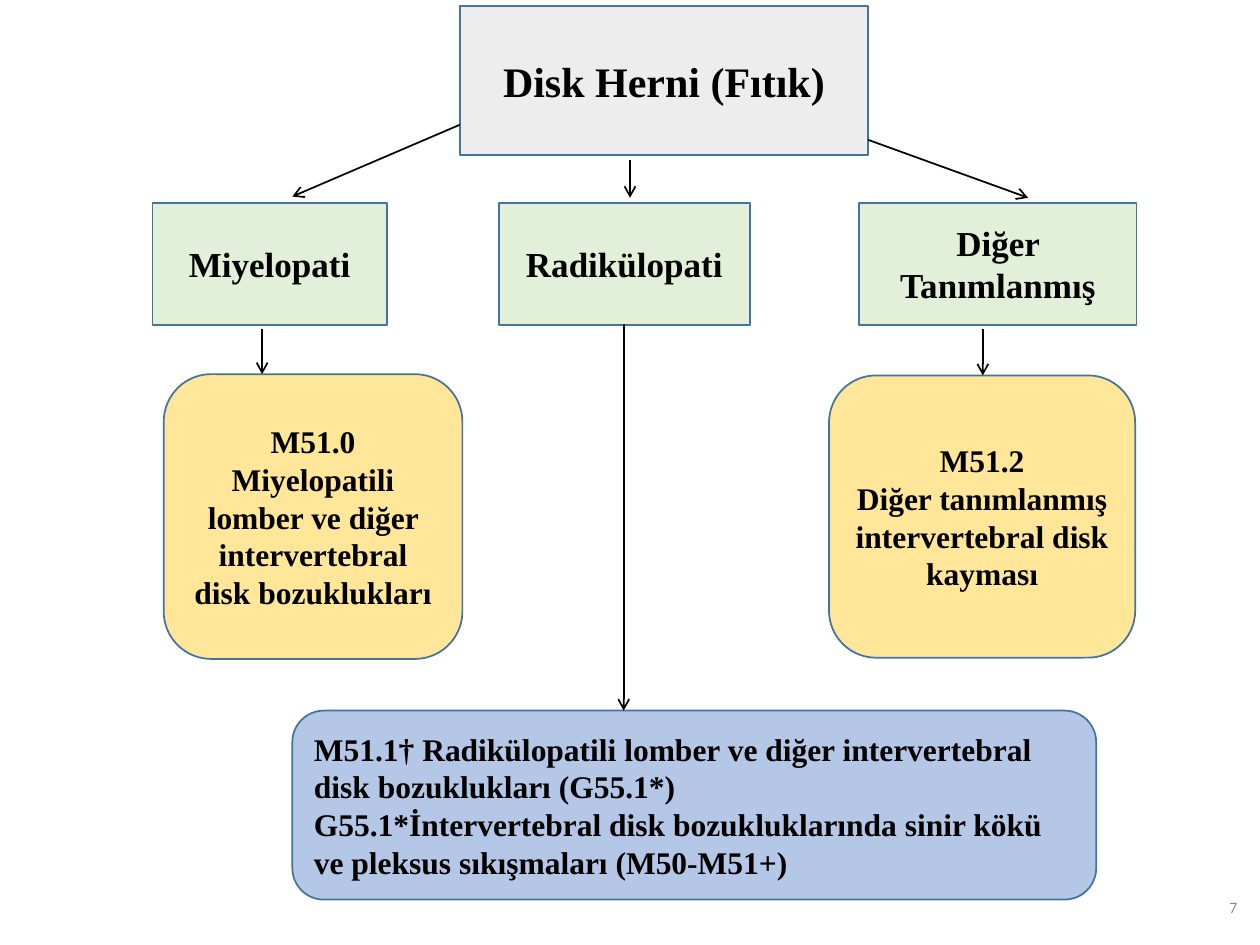
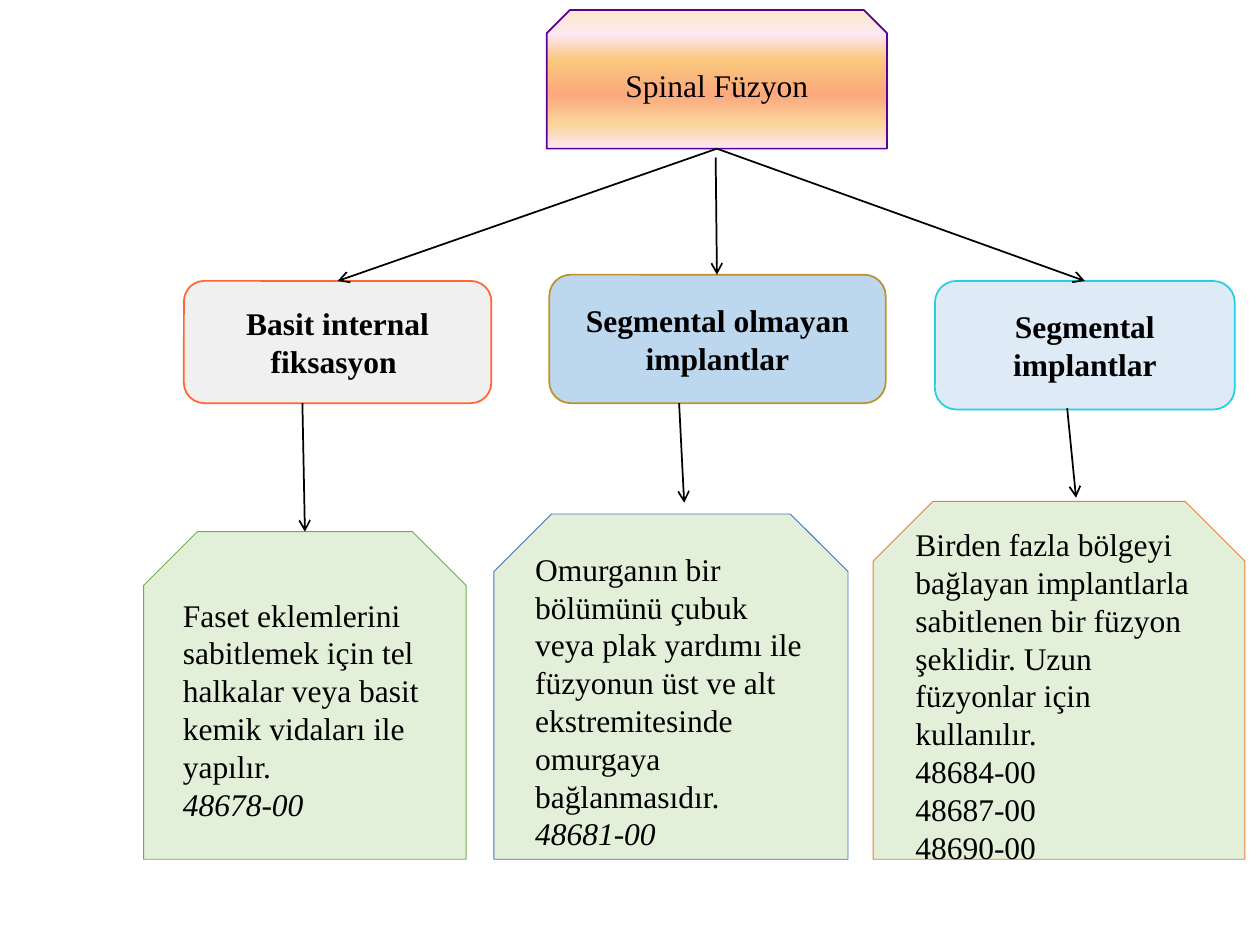
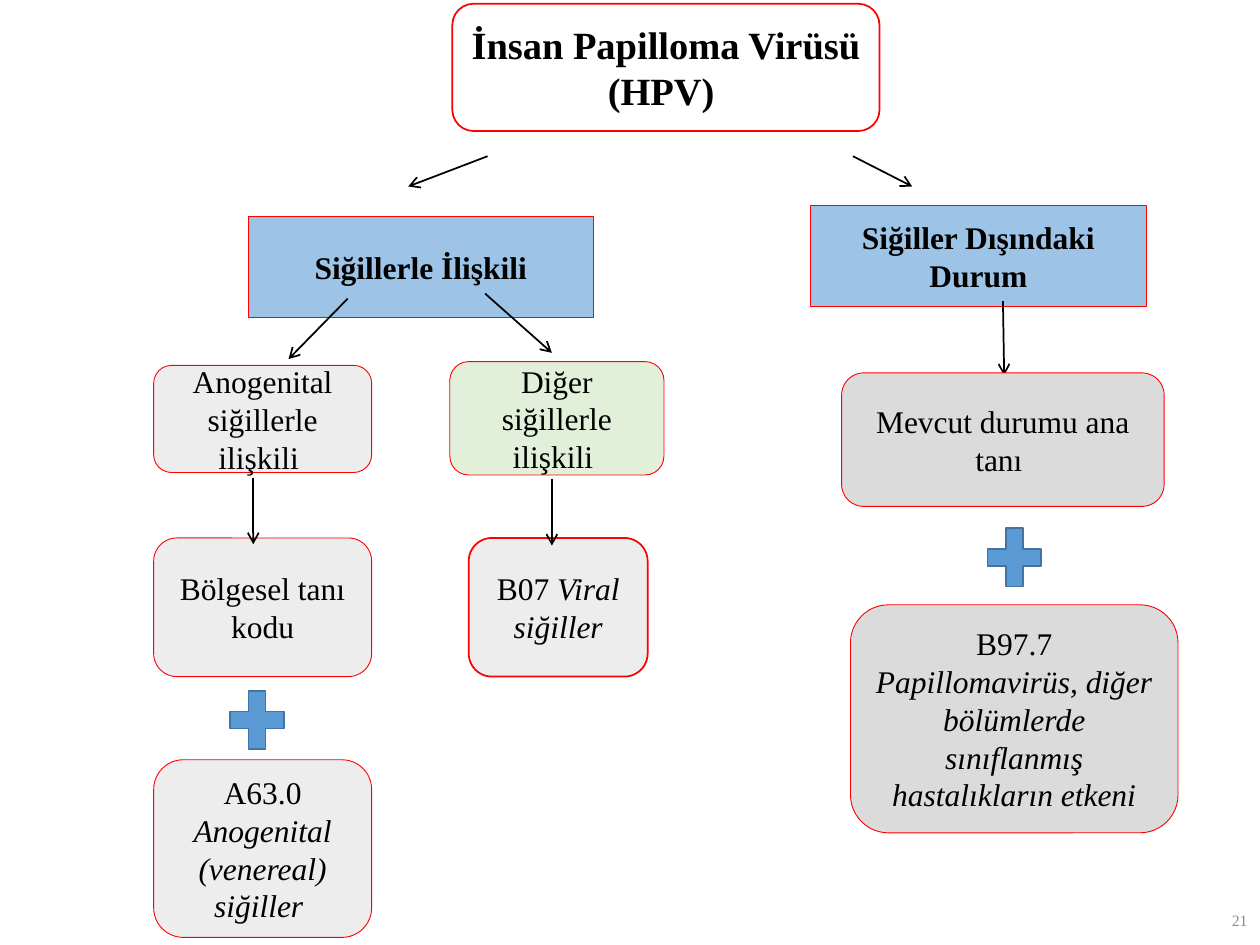
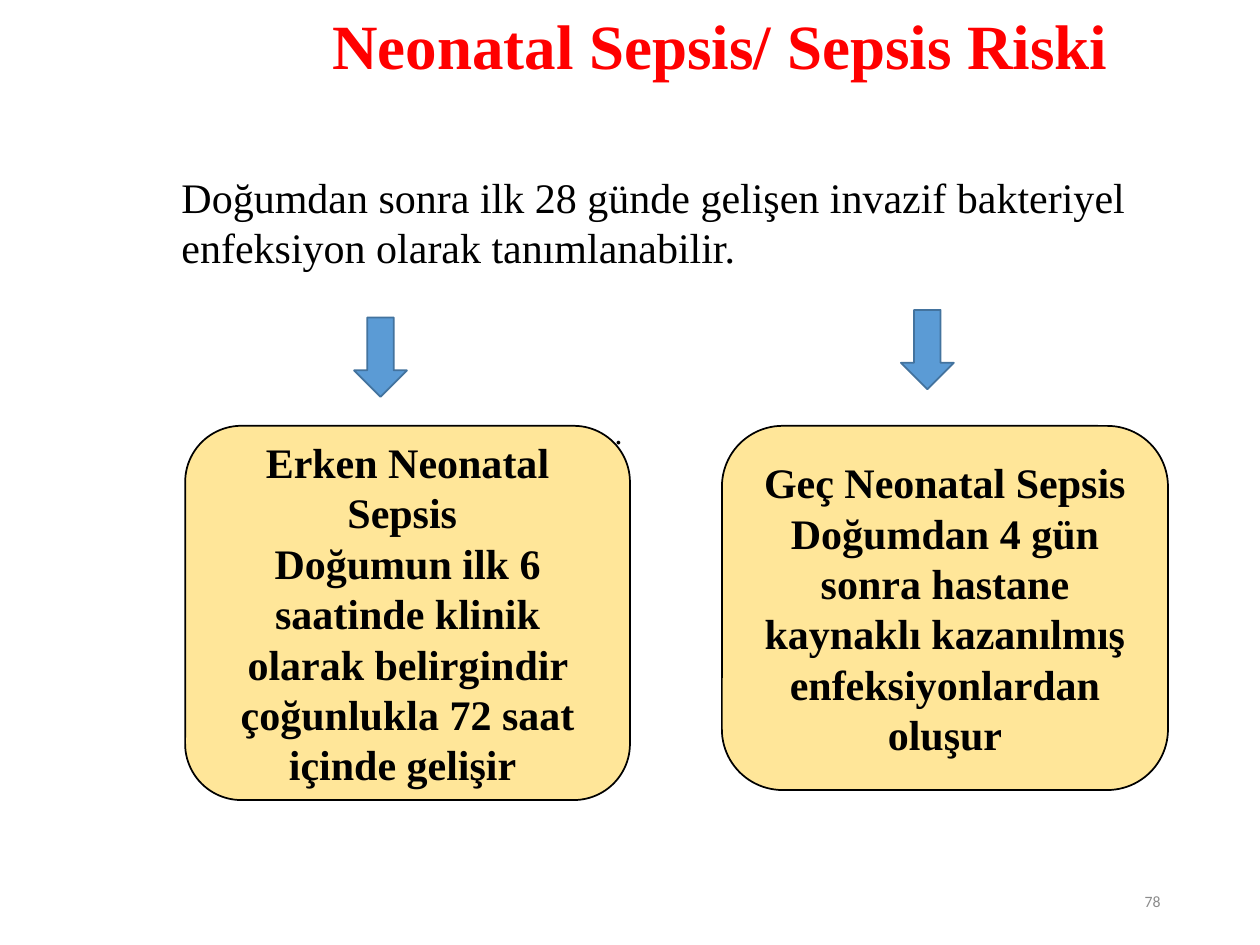
from dataclasses import dataclass

from lxml import etree
from pptx import Presentation
from pptx.dml.color import RGBColor
from pptx.enum.shapes import MSO_CONNECTOR, MSO_SHAPE
from pptx.enum.text import MSO_ANCHOR, MSO_AUTO_SIZE, PP_ALIGN
from pptx.oxml.ns import qn
from pptx.util import Inches, Pt

RECT = MSO_SHAPE.RECTANGLE
ROUND = MSO_SHAPE.ROUNDED_RECTANGLE
SNIP = MSO_SHAPE.SNIP_2_SAME_RECTANGLE
PROCESS = MSO_SHAPE.FLOWCHART_ALTERNATE_PROCESS
PLUS = MSO_SHAPE.MATH_PLUS
DOWN_ARROW = MSO_SHAPE.DOWN_ARROW
STRAIGHT = MSO_CONNECTOR.STRAIGHT
LEFT, CENTER, RIGHT = PP_ALIGN.LEFT, PP_ALIGN.CENTER, PP_ALIGN.RIGHT
TOP, MIDDLE = MSO_ANCHOR.TOP, MSO_ANCHOR.MIDDLE
NO_FIT = MSO_AUTO_SIZE.NONE
CONTENT_LAYOUT, BLANK_LAYOUT = 1, 6


@dataclass(frozen=True)
class Theme:
    serif: str = "Times New Roman"
    sans: str = "Calibri"
    black: str = "000000"
    white: str = "FFFFFF"
    red: str = "FF0000"
    number: str = "8C8C8C"
    navy: str = "43739E"
    blue: str = "5B9BD5"
    sky: str = "9DC3E6"
    light_sky: str = "BDD7EE"
    pale_sky: str = "DEEBF7"
    lavender: str = "B4C7E7"
    silver: str = "EDEDED"
    pale_silver: str = "F1F0F0"
    gray: str = "DBDBDB"
    green: str = "E2F0D9"
    gold: str = "FFE699"
    purple: str = "5C0096"
    coral: str = "FF6633"
    bronze: str = "BD922A"
    cyan: str = "22D0DE"
    leaf: str = "70AD47"
    royal: str = "4472C4"
    orange: str = "ED7D31"
    sunset: tuple = ((0, "FBEAC7"), (18, "FEE7F2"), (36, "FAC77D"),
                     (61, "FBA97D"), (82, "FBD49C"), (100, "FEE7F2"))
    title_size: int = 36
    lead_size: int = 24
    heading_size: int = 22
    branch_size: int = 20
    text_size: int = 18
    number_size: int = 9
    line: float = 1
    hairline: float = 0.5


class Deck:
    def __init__(self, theme):
        self.theme = theme
        self.presentation = Presentation()
        self.presentation.slide_width = Inches(10)
        self.presentation.slide_height = Inches(7.5)
        self.page = None

    def new_page(self, layout=BLANK_LAYOUT):
        layouts = self.presentation.slide_layouts
        self.page = self.presentation.slides.add_slide(layouts[layout])

    def set_text(self, frame, paragraphs, size, color=None, font=None,
                 bold=False, align=CENTER, anchor=MIDDLE):
        frame.word_wrap = True
        frame.auto_size = NO_FIT
        frame.vertical_anchor = anchor
        for index, spans in enumerate(paragraphs):
            para = frame.add_paragraph() if index else frame.paragraphs[0]
            para.alignment = align
            para.space_before = Pt(0)
            for text, slanted in spans:
                span = para.add_run()
                span.text = text
                span.font.name = font or self.theme.serif
                span.font.size = Pt(size)
                span.font.bold = bold
                span.font.italic = slanted
                span.font.color.rgb = RGBColor.from_string(color or self.theme.black)

    def shape(self, kind, place, fill, line, weight=None):
        box = self.page.shapes.add_shape(kind, *map(Inches, place))
        box.shadow.inherit = False
        if isinstance(fill, tuple):
            self.gradient(box, fill)
        else:
            box.fill.solid()
            box.fill.fore_color.rgb = RGBColor.from_string(fill)
        box.line.color.rgb = RGBColor.from_string(line)
        box.line.width = Pt(weight or self.theme.line)
        return box

    def gradient(self, box, colors):
        box.fill.gradient()
        box.fill.gradient_angle = 270
        stops = box._element.spPr.find(qn("a:gradFill")).find(qn("a:gsLst"))
        for stop in list(stops):
            stops.remove(stop)
        for percent, color in colors:
            stop = etree.SubElement(stops, qn("a:gs"), pos=str(percent * 1000))
            etree.SubElement(stop, qn("a:srgbClr"), val=color)

    def node(self, kind, place, fill, line, *paragraphs, weight=None,
             size=None, bold=False, align=CENTER):
        box = self.shape(kind, place, fill, line, weight)
        self.set_text(box.text_frame, paragraphs, size or self.theme.text_size,
                      bold=bold, align=align)
        return box

    def arrow(self, *ends):
        connector = self.page.shapes.add_connector(STRAIGHT, *map(Inches, ends))
        connector.line.color.rgb = RGBColor.from_string(self.theme.black)
        connector.line.width = Pt(self.theme.line)
        properties = connector._element.spPr
        etree.SubElement(properties.find(qn("a:ln")), qn("a:tailEnd"), type="arrow")
        etree.SubElement(properties, qn("a:effectLst"))

    def label(self, place, text, size, **style):
        box = self.page.shapes.add_textbox(*map(Inches, place))
        self.set_text(box.text_frame, [plain(text)], size, **style)

    def number(self, place, text, font):
        self.label(place, text, self.theme.number_size, color=self.theme.number,
                   font=font, align=RIGHT)

    def move(self, holder, place):
        holder.left, holder.top, holder.width, holder.height = map(Inches, place)

    def title(self, place, text):
        holder = self.page.shapes.title
        self.move(holder, place)
        self.set_text(holder.text_frame, [plain(text)], self.theme.title_size,
                      color=self.theme.red, bold=True, anchor=TOP)

    def body(self, place, text):
        holder = self.page.placeholders[1]
        self.move(holder, place)
        properties = holder.text_frame.paragraphs[0]._p.get_or_add_pPr()
        properties.set("marL", str(Inches(0.12)))
        properties.set("indent", "0")
        etree.SubElement(properties, qn("a:buNone"))
        self.set_text(holder.text_frame, [plain(text)], self.theme.lead_size,
                      align=LEFT, anchor=TOP)


def plain(text):
    return [(text, False)]


def italic(text):
    return [(text, True)]


def disc_hernia(deck):
    theme = deck.theme
    deck.new_page()
    deck.node(RECT, (3.65, 0.05, 3.24, 1.18), theme.silver, theme.navy,
              plain("Disk Herni (Fıtık)"), size=theme.lead_size, bold=True)
    for left, width, name in ((1.21, 1.86, "Miyelopati"),
                              (3.96, 1.99, "Radikülopati"),
                              (6.82, 2.2, "Diğer Tanımlanmış")):
        deck.node(RECT, (left, 1.61, width, 0.97), theme.green, theme.navy,
                  plain(name), size=theme.branch_size, bold=True)
    codes = (
        ((1.3, 2.97, 2.37, 2.26), "M51.0",
         "Miyelopatili lomber ve diğer intervertebral disk bozuklukları"),
        ((6.58, 2.98, 2.43, 2.24), "M51.2",
         "Diğer tanımlanmış intervertebral disk kayması"),
    )
    for place, code, meaning in codes:
        deck.node(ROUND, place, theme.gold, theme.navy,
                  plain(code), plain(meaning), bold=True)
    deck.node(ROUND, (2.32, 5.64, 6.38, 1.5), theme.lavender, theme.navy,
              plain("M51.1† Radikülopatili lomber ve diğer intervertebral "
                    "disk bozuklukları (G55.1*)"),
              plain("G55.1*İntervertebral disk bozukluklarında sinir kökü "
                    "ve pleksus sıkışmaları (M50-M51+)"),
              bold=True, align=LEFT)
    for ends in ((3.65, 0.99, 2.32, 1.56), (5, 1.27, 5, 1.57),
                 (6.89, 1.11, 8.16, 1.57), (2.08, 2.61, 2.08, 2.97),
                 (4.95, 2.57, 4.95, 5.64), (7.8, 2.61, 7.8, 2.98)):
        deck.arrow(*ends)
    deck.number((9.49, 6.95, 0.43, 0.5), "7", theme.sans)


def spinal_fusion(deck):
    theme = deck.theme
    deck.new_page()
    deck.node(SNIP, (4.34, 0.08, 2.7, 1.1), theme.sunset, theme.purple,
              plain("Spinal Füzyon"))
    methods = (
        ((1.46, 2.23, 2.44, 0.97), theme.pale_silver, theme.coral,
         "Basit internal fiksasyon "),
        ((4.36, 2.18, 2.67, 1.02), theme.light_sky, theme.bronze,
         "Segmental olmayan implantlar"),
        ((7.42, 2.23, 2.38, 1.02), theme.pale_sky, theme.cyan,
         "Segmental implantlar"),
    )
    for place, fill, line, name in methods:
        deck.node(ROUND, place, fill, line, plain(name), bold=True)
    details = (
        ((1.14, 4.22, 2.56, 2.6), theme.leaf,
         plain("Faset eklemlerini sabitlemek için tel halkalar veya basit "
               "kemik vidaları ile yapılır."),
         italic("48678-00")),
        ((3.92, 4.08, 2.81, 2.74), theme.royal,
         plain("Omurganın bir bölümünü çubuk veya plak yardımı ile füzyonun "
               "üst ve alt ekstremitesinde omurgaya bağlanmasıdır."),
         italic("48681-00")),
        ((6.93, 3.98, 2.95, 2.84), theme.orange,
         plain("Birden fazla bölgeyi bağlayan implantlarla sabitlenen bir "
               "füzyon şeklidir. Uzun füzyonlar için kullanılır."),
         plain("48684-00"), plain("48687-00"), plain("48690-00")),
    )
    for place, line, *paragraphs in details:
        deck.node(SNIP, place, theme.green, line, *paragraphs,
                  weight=theme.hairline, align=LEFT)
    for ends in ((2.4, 3.2, 2.42, 4.22), (5.39, 3.2, 5.43, 3.99),
                 (8.47, 3.24, 8.54, 3.95), (5.69, 1.18, 2.68, 2.23),
                 (5.68, 1.25, 5.69, 2.18), (5.69, 1.18, 8.61, 2.23)):
        deck.arrow(*ends)


def papilloma_virus(deck):
    theme = deck.theme
    deck.new_page()
    deck.node(ROUND, (3.59, 0.03, 3.39, 1.01), theme.white, theme.red,
              plain("İnsan Papilloma Virüsü (HPV) "),
              size=theme.heading_size, bold=True)
    for place, name in (((1.97, 1.72, 2.74, 0.8), "Siğillerle İlişkili"),
                        ((6.43, 1.63, 2.67, 0.8), "Siğiller Dışındaki Durum")):
        deck.node(RECT, place, theme.sky, theme.red, plain(name),
                  weight=theme.hairline, bold=True)
    for ends in ((3.87, 1.24, 3.24, 1.48), (6.77, 1.24, 7.24, 1.48),
                 (2.76, 2.37, 2.29, 2.85), (3.85, 2.33, 4.38, 2.8),
                 (7.96, 2.39, 7.97, 2.98)):
        deck.arrow(*ends)
    steps = (
        ((1.22, 2.9, 1.73, 0.85), theme.silver, theme.hairline,
         plain("Anogenital siğillerle ilişkili ")),
        ((3.57, 2.87, 1.7, 0.9), theme.green, theme.hairline,
         plain("Diğer siğillerle ilişkili ")),
        ((1.22, 4.27, 1.73, 1.1), theme.silver, theme.hairline,
         plain("Bölgesel tanı kodu")),
        ((1.22, 6.03, 1.73, 1.41), theme.silver, theme.hairline,
         plain("A63.0 ") + italic("Anogenital (venereal) siğiller ")),
        ((3.72, 4.27, 1.42, 1.1), theme.silver, theme.line,
         plain("B07 ") + italic("Viral siğiller")),
        ((6.68, 2.96, 2.56, 1.06), theme.gray, theme.hairline,
         plain("Mevcut durumu ana tanı ")),
        ((6.75, 4.8, 2.6, 1.81), theme.gray, theme.hairline,
         plain("B97.7 ") + italic("Papillomavirüs, diğer bölümlerde "
                                  "sınıflanmış hastalıkların etkeni")),
    )
    for place, fill, weight, spans in steps:
        deck.node(PROCESS, place, fill, theme.red, spans, weight=weight)
    for ends in ((2.01, 3.79, 2.01, 4.32), (4.38, 3.8, 4.38, 4.33)):
        deck.arrow(*ends)
    for left, top in ((7.76, 4.11), (1.75, 5.4)):
        deck.shape(PLUS, (left, top, 0.58, 0.63), theme.blue, theme.navy)
    deck.number((9.54, 7.1, 0.46, 0.4), "21", theme.serif)


def neonatal_sepsis(deck):
    theme = deck.theme
    deck.new_page(CONTENT_LAYOUT)
    deck.title((1.43, 0, 8.57, 1.02), "Neonatal Sepsis/ Sepsis Riski")
    deck.body((1.22, 1.31, 8.28, 5.69),
              "Doğumdan sonra ilk 28 günde gelişen invazif bakteriyel "
              "enfeksiyon olarak tanımlanabilir.")
    for left, top in ((2.81, 2.52), (7.15, 2.46)):
        deck.shape(DOWN_ARROW, (left, top, 0.42, 0.63), theme.blue, theme.navy)
    early = deck.node(ROUND, (1.47, 3.38, 3.53, 2.97), theme.gold, theme.black,
                      plain("Erken Neonatal Sepsis "),
                      plain("Doğumun ilk 6 saatinde klinik olarak belirgindir "
                            "çoğunlukla 72 saat içinde gelişir "),
                      size=theme.lead_size, bold=True)
    early.adjustments[0] = 0.15
    deck.node(ROUND, (5.73, 3.38, 3.54, 2.89), theme.gold, theme.black,
              plain("Geç Neonatal Sepsis"),
              plain("Doğumdan 4 gün sonra hastane kaynaklı kazanılmış "
                    "enfeksiyonlardan oluşur"),
              size=theme.lead_size, bold=True)
    deck.label((2.32, 3.23, 5.18, 0.4), ".", theme.text_size)
    deck.number((7.06, 6.95, 2.25, 0.4), "78", theme.sans)


def main():
    deck = Deck(Theme())
    for build in (disc_hernia, spinal_fusion, papilloma_virus, neonatal_sepsis):
        build(deck)
    deck.presentation.save("out.pptx")


if __name__ == "__main__":
    main()
